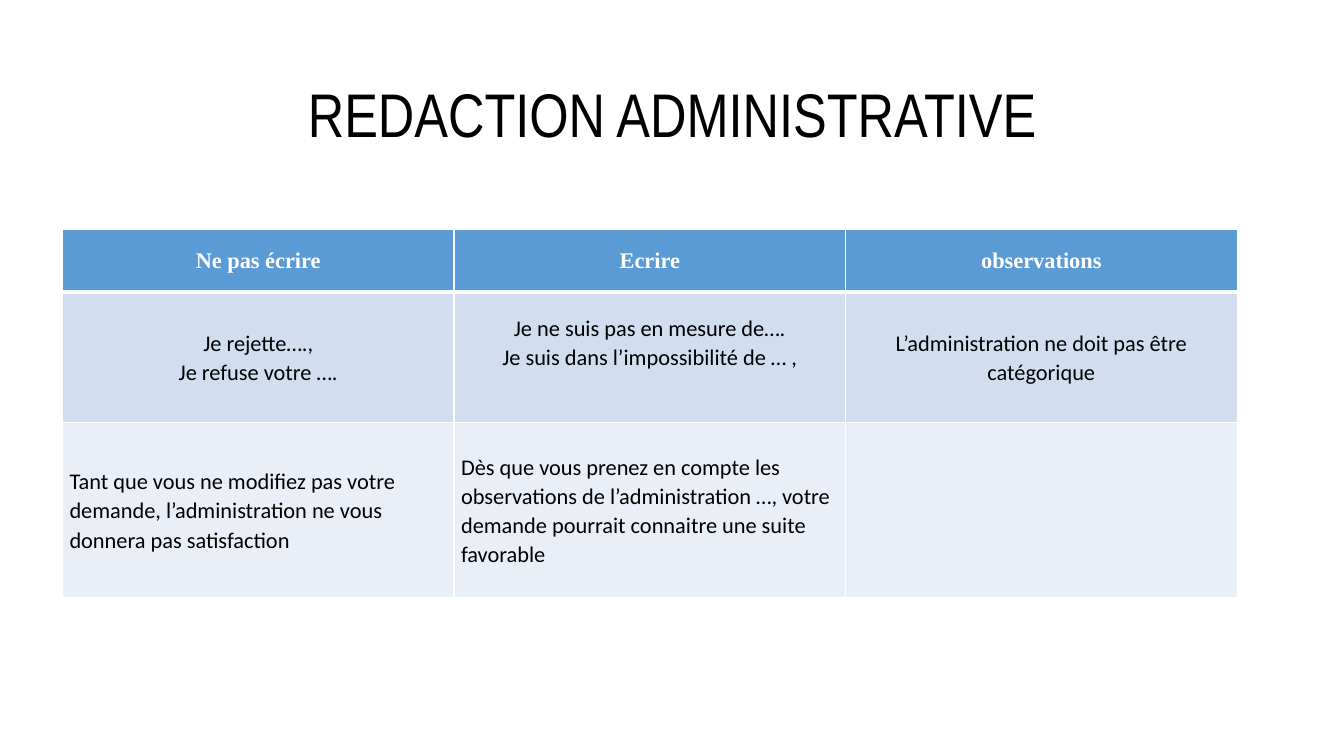
from dataclasses import dataclass

from lxml import etree
from pptx import Presentation
from pptx import util as u
from pptx.dml.color import RGBColor
from pptx.enum import text
from pptx.oxml import ns


@dataclass(frozen=True)
class Theme:
    ink: str = "000000"
    paper: str = "FFFFFF"
    head: str = "5B9BD5"
    bands: tuple = ("D2DEEF", "EAEFF7")
    title: int = 44
    body: int = 16
    thin: int = 1
    thick: int = 3


THEME = Theme()
WIDE, HIGH = u.Inches(13.33), u.Inches(7.5)
MID, LEFT = text.PP_ALIGN.CENTER, text.PP_ALIGN.LEFT
ROWS = (
    ("Ne pas écrire", "Ecrire", "observations"),
    (
        "Je rejette….,\nJe refuse votre ….",
        "Je ne suis pas en mesure de….\nJe suis dans l’impossibilité de …\u00a0,",
        "L’administration ne doit pas être catégorique",
    ),
    (
        "Tant que vous ne modifiez pas votre demande, l’administration ne vous donnera pas satisfaction",
        "Dès que vous prenez en compte les observations de l’administration …, votre demande pourrait connaitre une suite favorable",
        "",
    ),
)
SHARES = (0.17, 0.355, 0.475)


def apply(item, values):
    for name, value in values.items():
        setattr(item, name, value)


def write(frame, words, align, space, font, color):
    frame.text = words
    for para in frame.paragraphs:
        apply(para, {"alignment": align, "line_spacing": space})
        for run in para.runs:
            apply(run.font, font)
            run.font.color.rgb = RGBColor.from_string(color)


def edge(cell, top, bottom):
    widths = {"lnL": THEME.thin, "lnR": THEME.thin, "lnT": top, "lnB": bottom}
    props = cell._tc.get_or_add_tcPr()
    for index, (side, width) in enumerate(widths.items()):
        line = etree.Element(ns.qn(f"a:{side}"), w=str(u.Pt(width)))
        fill = etree.SubElement(line, ns.qn("a:solidFill"))
        etree.SubElement(fill, ns.qn("a:srgbClr"), val=THEME.paper)
        props.insert(index, line)


def heading(slide, box):
    title = slide.shapes.title
    apply(title, dict(zip(("left", "top", "width", "height"), box)))
    frame = title.text_frame
    apply(frame, {"word_wrap": True, "vertical_anchor": text.MSO_ANCHOR.MIDDLE})
    font = {"name": "Arial Narrow", "size": u.Pt(THEME.title)}
    write(frame, "REDACTION ADMINISTRATIVE", MID, 0.9, font, THEME.ink)


def advice(slide, box):
    left, top, width, height = box
    grid = slide.shapes.add_table(len(ROWS), len(ROWS[0]), left, top, width, height).table
    for col in grid.columns:
        col.width = width // len(ROWS[0])
    fills = (THEME.head, *THEME.bands)
    for r, (words, share, fill) in enumerate(zip(ROWS, SHARES, fills)):
        grid.rows[r].height = int(height * share)
        head = r == 0
        font = {
            "name": "Times New Roman" if head else "Calibri",
            "size": u.Pt(THEME.body),
            "bold": head,
        }
        for c, label in enumerate(words):
            cell = grid.cell(r, c)
            apply(cell, {
                "vertical_anchor": text.MSO_ANCHOR.MIDDLE,
                "margin_left": u.Inches(0.07),
                "margin_right": u.Inches(0.07),
                "margin_top": 0,
                "margin_bottom": u.Inches(0.29) if (r, c) == (1, 1) else 0,
            })
            cell.fill.solid()
            cell.fill.fore_color.rgb = RGBColor.from_string(fill)
            write(cell.text_frame, label, LEFT if r == 2 else MID, 1.07, font,
                  THEME.paper if head else THEME.ink)
            edge(cell, THEME.thick if r == 1 else THEME.thin,
                 THEME.thick if head else THEME.thin)


def area(left, top, width, height):
    return int(left * WIDE), int(top * HIGH), int(width * WIDE), int(height * HIGH)


def main():
    deck = Presentation()
    apply(deck, {"slide_width": WIDE, "slide_height": HIGH})
    slide = deck.slides.add_slide(deck.slide_layouts[5])
    heading(slide, area(0.069, 0.059, 0.863, 0.193))
    advice(slide, area(0.0465, 0.303, 0.874, 0.488))
    deck.save("out.pptx")


if __name__ == "__main__":
    main()
